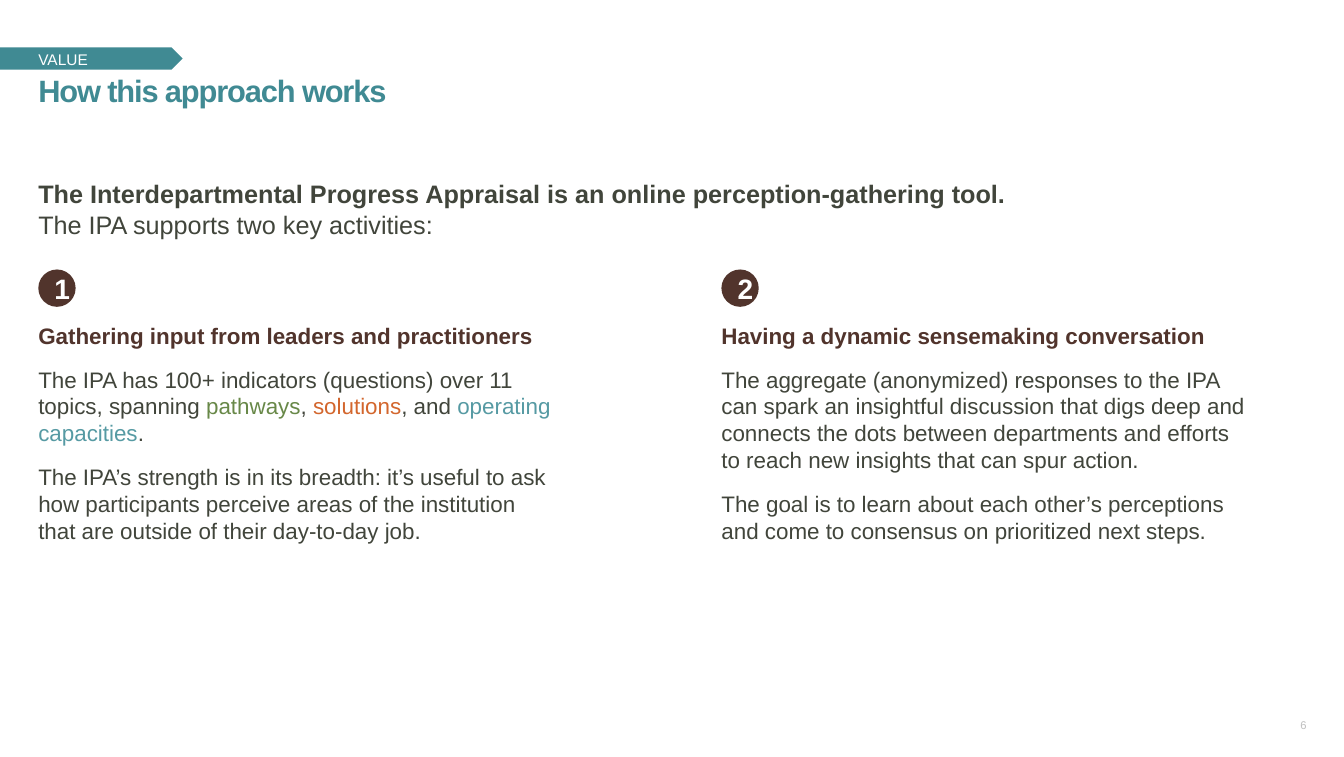
from dataclasses import dataclass

import pptx
import pptx.dml.color
import pptx.enum.shapes
import pptx.enum.text
import pptx.util

PX = 9144  # EMU per px, 100 px to the inch
FONT = "Arial"
TEAL, BROWN, INK, WHITE, GREY = "408A93", "51342C", "41453B", "FFFFFF", "BFBFBF"
GREEN, ORANGE, LIGHT_TEAL = "688848", "D3662D", "569AA3"
LEFT, BADGE_TOP, BADGE_SIZE, BODY_TOP, BODY_HEIGHT = 38, 267, 37, 319, 363
ALIGN = pptx.enum.text.PP_ALIGN
ANCHOR = pptx.enum.text.MSO_ANCHOR


@dataclass
class Run:
    text: str
    color: str = INK
    bold: bool = False
    spacing: int = 0  # hundredths of a point


@dataclass
class Activity:
    number: str
    left: int
    width: int
    paragraphs: list[list[Run]]


def rgb(color: str) -> pptx.dml.color.RGBColor:
    return pptx.dml.color.RGBColor.from_string(color)


def paint(sp, color: str) -> None:
    sp.shadow.inherit = False
    sp.fill.solid()
    sp.fill.fore_color.rgb = rgb(color)
    sp.line.fill.background()


def add_text(shapes, box: tuple[int, int, int, int], paragraphs: list[list[Run]],
             size: int, before: int = 0, align=ALIGN.LEFT, anchor=ANCHOR.TOP,
             inset: int = 0, wrap: bool = True) -> None:
    tf = shapes.add_textbox(*(v * PX for v in box)).text_frame
    tf.word_wrap = wrap
    tf.vertical_anchor = anchor
    tf.margin_left = tf.margin_right = tf.margin_top = tf.margin_bottom = inset * PX
    for i, runs in enumerate(paragraphs):
        p = tf.add_paragraph() if i else tf.paragraphs[0]
        p.alignment = align
        p.space_before = pptx.util.Pt(before)
        for run in runs:
            r = p.add_run()
            r.text = run.text.rstrip("\n")
            r.font.name = FONT
            r.font.size = pptx.util.Pt(size)
            r.font.bold = run.bold
            r.font.color.rgb = rgb(run.color)
            if run.spacing:
                r._r.get_or_add_rPr().set("spc", str(run.spacing))
            if run.text.endswith("\n"):
                p.add_line_break()


def add_activity(shapes, activity: Activity) -> None:
    # Numbered badge
    group = shapes.add_group_shape().shapes
    sp = group.add_shape(pptx.enum.shapes.MSO_SHAPE.OVAL, activity.left * PX,
                         BADGE_TOP * PX, BADGE_SIZE * PX, BADGE_SIZE * PX)
    paint(sp, BROWN)
    add_text(group, (activity.left + 11, BADGE_TOP - 2, 16, 41),
             [[Run(activity.number, WHITE, True)]], 20,
             align=ALIGN.CENTER, anchor=ANCHOR.MIDDLE, inset=5)
    # Heading and body
    add_text(shapes, (activity.left, BODY_TOP, activity.width, BODY_HEIGHT),
             activity.paragraphs, 16, before=12)


ACTIVITIES = [
    Activity("1", LEFT, 513, [
        [Run("Gathering input from leaders and practitioners", BROWN, True)],
        [Run("The IPA has 100+ indicators (questions) over 11 topics, spanning "),
         Run("pathways", GREEN), Run(", "), Run("solutions", ORANGE), Run(", and "),
         Run("operating capacities", LIGHT_TEAL), Run(".")],
        [Run("The IPA’s strength is in its breadth: it’s useful to ask how participants "
             "perceive areas of the institution that are outside of their day-to-day job.")],
    ]),
    Activity("2", 715, 523, [
        [Run("Having a dynamic sensemaking conversation", BROWN, True)],
        [Run("The aggregate (anonymized) responses to the IPA can spark an insightful "
             "discussion that digs deep and connects the dots between departments and "
             "efforts to reach new insights that can spur action.")],
        [Run("The goal is to learn about each other’s perceptions and come to consensus "
             "on prioritized next steps.")],
    ]),
]


def main() -> None:
    prs = pptx.Presentation()
    prs.slide_width, prs.slide_height = 1332 * PX, 750 * PX
    shapes = prs.slides.add_slide(prs.slide_layouts[6]).shapes

    # Section tag
    outline = shapes.build_freeform(0, 47, scale=PX)
    outline.add_line_segments([(170, 47), (181, 58), (170, 69), (0, 69)])
    paint(outline.convert_to_shape(), TEAL)
    add_text(shapes, (LEFT, 46, 578, 22), [[Run("VALUE", WHITE)]], 11,
             before=2, anchor=ANCHOR.BOTTOM)

    # Title and page number
    add_text(shapes, (LEFT, 71, 1256, 31),
             [[Run("How this approach works", TEAL, True, -80)]], 22, before=4)
    add_text(shapes, (1281, 711, 14, 14), [[Run("6", GREY)]], 8,
             align=ALIGN.RIGHT, anchor=ANCHOR.MIDDLE, wrap=False)

    # Introduction
    add_text(shapes, (LEFT, 177, 1256, 58), [[
        Run("The Interdepartmental Progress Appraisal is an online "
            "perception-gathering tool.\n", bold=True),
        Run("The IPA supports two key activities:")]], 18, before=12)

    # Activities
    for activity in ACTIVITIES:
        add_activity(shapes, activity)

    prs.save("out.pptx")


if __name__ == "__main__":
    main()
